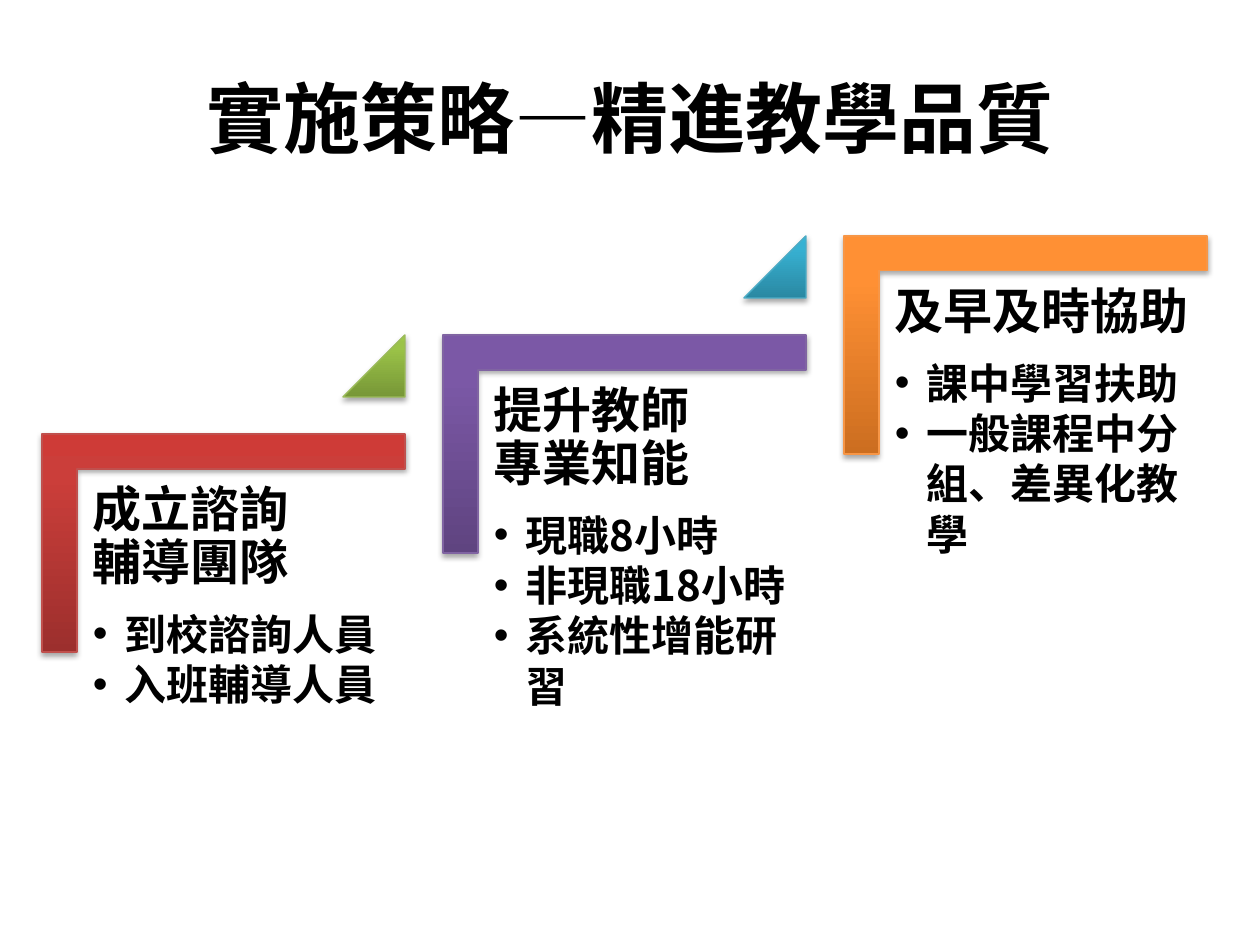
from copy import deepcopy

from pptx import Presentation
from pptx.dml.color import RGBColor
from pptx.enum.shapes import MSO_SHAPE
from pptx.enum.text import MSO_ANCHOR, MSO_AUTO_SIZE, PP_ALIGN
from pptx.oxml import parse_xml
from pptx.oxml.ns import nsdecls, qn
from pptx.oxml.xmlchemy import OxmlElement
from pptx.util import Emu, Pt

PX = 914400 / 126
FONT = "Noto Sans CJK SC"
BLACK = RGBColor(0x00, 0x00, 0x00)
WHITE = RGBColor(0xFF, 0xFF, 0xFF)

# Each palette: dark, middle and light gradient stops, then the outline.
RED, GREEN, PURPLE, BLUE, ORANGE = [
    [RGBColor.from_string(code) for code in codes.split()]
    for codes in (
        "9C2F2D CB3E3A CE3B37 C0504D",
        "779737 9BC348 9DC746 9BBB59",
        "5F4480 7B58A6 7C57A8 8064A2",
        "2A88A2 37B1D2 34B4D6 4BACC6",
        "CC6E20 FF9034 FF9136 F79646",
    )
]
STOPS = (0, 0.8, 1)

LEFT, TOP = 42, 434
STEP_X, STEP_Y = 401, 99
CORNER_WIDTH, CORNER_HEIGHT = 363, 218
BAR = 36
TRIANGLE = 62

STEPS = [
    (RED, "成立諮詢\v輔導團隊", ["到校諮詢人員", "入班輔導人員"]),
    (PURPLE, "提升教師\v專業知能", ["現職8小時", "非現職18小時", "系統性增能研習"]),
    (ORANGE, "及早及時協助", ["課中學習扶助", "一般課程中分組、差異化教學"]),
]
TRIANGLE_PALETTES = [GREEN, BLUE]


def px(length):
    return Emu(round(length * PX))


def write(para, text, size, align=PP_ALIGN.LEFT, line=1.0, after=0, bullet=False):
    para.text = text
    para.alignment = align
    para.line_spacing = line
    para.space_before, para.space_after = Pt(0), Pt(after)
    for span in para.runs:
        font = span.font
        font.size, font.bold, font.name = Pt(size), True, FONT
        font.color.rgb = BLACK
        east_asian = OxmlElement("a:ea")
        east_asian.set("typeface", FONT)
        span._r.get_or_add_rPr().append(east_asian)
    properties = para._p.get_or_add_pPr()
    indent = px(32) if bullet else 0
    properties.set("marL", str(indent))
    properties.set("indent", str(-indent))
    if bullet:
        typeface = OxmlElement("a:buFont")
        typeface.set("typeface", "Arial")
        mark = OxmlElement("a:buChar")
        mark.set("char", "•")
        properties.extend([typeface, mark])
    else:
        properties.append(OxmlElement("a:buNone"))


class StairPage:
    """Holds the style and the current slide."""

    def __init__(self, page):
        self.page = page
        fill = page.background.fill
        fill.solid()
        fill.fore_color.rgb = WHITE

    def place(self, box, left, top, width, height, anchor, inset):
        box.left, box.top = px(left), px(top)
        box.width, box.height = px(width), px(height)
        frame = box.text_frame
        frame.word_wrap = True
        frame.auto_size = MSO_AUTO_SIZE.NONE
        frame.vertical_anchor = anchor
        frame.margin_left = frame.margin_right = px(inset)
        frame.margin_top = frame.margin_bottom = px(inset)
        return frame

    def title(self, text):
        frame = self.place(self.page.shapes.title, 63, 38, 1134, 158,
                           MSO_ANCHOR.MIDDLE, 10)
        write(frame.paragraphs[0], text, 44, align=PP_ALIGN.CENTER)

    def topic(self, box, left, top, heading, items):
        frame = self.place(box, left, top, 328, 287, MSO_ANCHOR.TOP, 15)
        write(frame.paragraphs[0], heading, 28, line=0.9, after=9.8)
        for item in items:
            write(frame.add_paragraph(), item, 24, line=Pt(28.8), bullet=True)

    def glossy(self, kind, left, top, width, height, palette):
        """Add a shape with an upright gradient and a soft shadow."""
        shape = self.page.shapes.add_shape(
            kind, px(left), px(top), px(width), px(height))
        shape.fill.gradient()
        shape.fill.gradient_angle = 90
        properties = shape._element.spPr
        gradient = properties.find(qn("a:gradFill"))
        gradient.set("rotWithShape", "0")
        stop_list = gradient.find(qn("a:gsLst"))
        stop_list.append(deepcopy(stop_list[-1]))
        *colours, outline = palette
        for stop, position, colour in zip(shape.fill.gradient_stops, STOPS, colours):
            stop.position = position
            stop.color.rgb = colour
        shape.line.color.rgb = outline
        shape.line.width = Pt(0.75)
        properties.append(parse_xml(
            f'<a:effectLst {nsdecls("a")}>'
            '<a:outerShdw blurRad="40000" dist="23000" dir="5400000" rotWithShape="0">'
            '<a:srgbClr val="000000"><a:alpha val="35000"/></a:srgbClr>'
            '</a:outerShdw></a:effectLst>'))
        return shape

    def corner(self, left, top, palette):
        """Add an L shape turned a quarter, its bars along the top and left."""
        shift = (CORNER_WIDTH - CORNER_HEIGHT) / 2
        shape = self.glossy(MSO_SHAPE.CORNER, left + shift, top - shift,
                            CORNER_HEIGHT, CORNER_WIDTH, palette)
        shape.rotation = 90
        shape.adjustments[0] = shape.adjustments[1] = 0.16

    def triangle(self, left, top, palette):
        shape = self.glossy(MSO_SHAPE.ISOSCELES_TRIANGLE, left, top,
                            TRIANGLE, TRIANGLE, palette)
        shape.adjustments[0] = 1


def main():
    deck = Presentation()
    deck.slide_width, deck.slide_height = px(1260), px(945)
    page = deck.slides.add_slide(deck.slide_layouts.get_by_name("Comparison"))
    stairs = StairPage(page)
    stairs.title("實施策略—精進教學品質")

    *boxes, spare = [box for box in page.placeholders
                     if box.placeholder_format.idx in (1, 2, 3, 4)]
    spare._element.getparent().remove(spare._element)

    for index, (box, (palette, heading, items)) in enumerate(zip(boxes, STEPS)):
        left, top = LEFT + index * STEP_X, TOP - index * STEP_Y
        stairs.corner(left, top, palette)
        stairs.topic(box, left + BAR, top + BAR, heading, items)
        if index < len(TRIANGLE_PALETTES):
            stairs.triangle(left + CORNER_WIDTH - TRIANGLE, top - STEP_Y,
                            TRIANGLE_PALETTES[index])

    deck.save("out.pptx")


if __name__ == "__main__":
    main()
